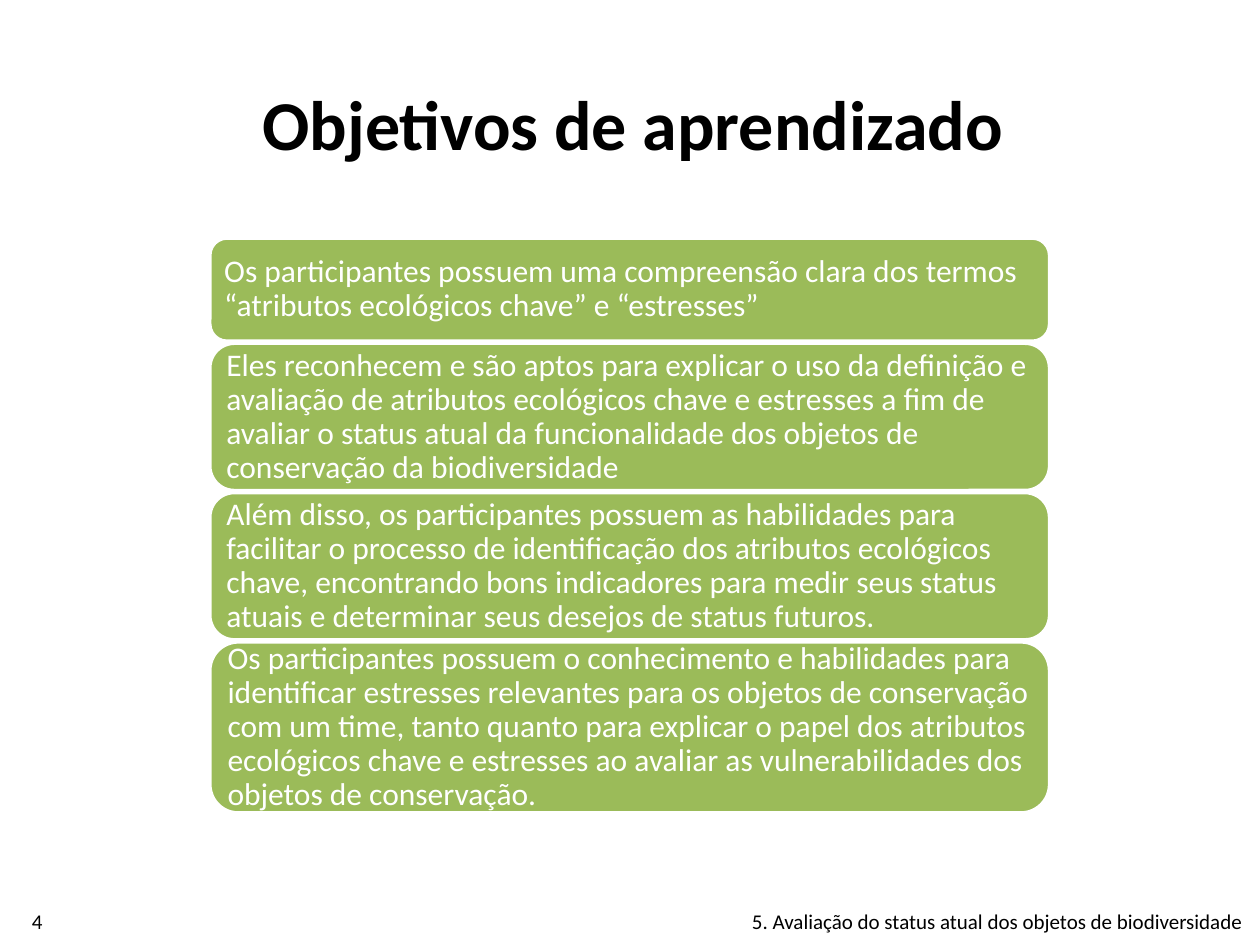
from pptx import Presentation
from pptx.dml.color import RGBColor
from pptx.enum.shapes import MSO_SHAPE
from pptx.enum.text import MSO_ANCHOR, PP_ALIGN
from pptx.util import Cm, Pt

ROUNDED = MSO_SHAPE.ROUNDED_RECTANGLE
MIDDLE = MSO_ANCHOR.MIDDLE
LEFT, CENTER, RIGHT = PP_ALIGN.LEFT, PP_ALIGN.CENTER, PP_ALIGN.RIGHT

BLACK = RGBColor(0x00, 0x00, 0x00)
WHITE = RGBColor(0xFF, 0xFF, 0xFF)
GREEN = RGBColor(0x9B, 0xBB, 0x59)
FONT = "Calibri"

OBJECTIVES = [
    (2.08, "Os participantes possuem uma compreensão clara dos termos "
           "“atributos ecológicos chave” e “estresses”"),
    (2.97, "Eles reconhecem e são aptos para explicar o uso da definição e "
           "avaliação de atributos ecológicos chave e estresses a fim de "
           "avaliar o status atual da funcionalidade dos objetos de "
           "conservação da biodiversidade"),
    (2.97, "Além disso, os participantes possuem as habilidades para "
           "facilitar o processo de identificação dos atributos ecológicos "
           "chave, encontrando bons indicadores para medir seus status "
           "atuais e determinar seus desejos de status futuros."),
    (3.45, "Os participantes possuem o conhecimento e habilidades para "
           "identificar estresses relevantes para os objetos de conservação "
           "com um time, tanto quanto para explicar o papel dos atributos "
           "ecológicos chave e estresses ao avaliar as vulnerabilidades dos "
           "objetos de conservação."),
]


def write_text(shape, text, size, color=BLACK, bold=False, align=CENTER,
               line_spacing=1.0, side=0.25, end=0.13):
    """Put one formatted paragraph, vertically centred, into a shape."""
    frame = shape.text_frame
    frame.word_wrap = True
    frame.vertical_anchor = MIDDLE
    frame.margin_left = frame.margin_right = Cm(side)
    frame.margin_top = frame.margin_bottom = Cm(end)
    paragraph = frame.paragraphs[0]
    paragraph.text = text
    paragraph.alignment = align
    paragraph.line_spacing = line_spacing
    font = paragraph.font
    font.name, font.size, font.bold = FONT, Pt(size), bold
    font.color.rgb = color


def add_label(slide, left, top, width, height, text, **text_format):
    """Add a text box in the given box."""
    shape = slide.shapes.add_textbox(Cm(left), Cm(top), Cm(width), Cm(height))
    write_text(shape, text, **text_format)


def add_objectives(slide, left, top, width, gap, objectives):
    """Stack the objective cards downwards with an equal gap."""
    for height, text in objectives:
        card = slide.shapes.add_shape(
            ROUNDED, Cm(left), Cm(top), Cm(width), Cm(height))
        card.shadow.inherit = False
        card.fill.solid()
        card.fill.fore_color.rgb = GREEN
        card.line.color.rgb = WHITE
        card.line.width = Pt(2)
        write_text(card, text, size=18, color=WHITE, align=LEFT,
                   line_spacing=0.9, side=0.19, end=0.19)
        top += height + gap


def add_footer(slide, top, width, height, number, chapter):
    """Add the slide number on the left and the chapter on the right."""
    number_width, chapter_width = 1.5, 14.9
    add_label(slide, 0, top, number_width, height, number, size=12)
    add_label(slide, width - chapter_width, top, chapter_width, height,
              chapter, size=12, align=RIGHT, side=0.35)


def main():
    """Build and save the slide."""
    presentation = Presentation()
    presentation.slide_width, presentation.slide_height = Cm(25.4), Cm(19.05)
    slide = presentation.slides.add_slide(presentation.slide_layouts[6])
    add_label(slide, 3.6, 0.97, 18.32, 3, "Objetivos de aprendizado",
              size=40, bold=True)
    add_objectives(slide, 4.23, 4.8, 16.93, 0.04, OBJECTIVES)
    add_footer(slide, 18.08, 25.4, 0.97, "4",
               "5. Avaliação do status atual dos objetos de biodiversidade")
    presentation.save("out.pptx")


if __name__ == "__main__":
    main()
